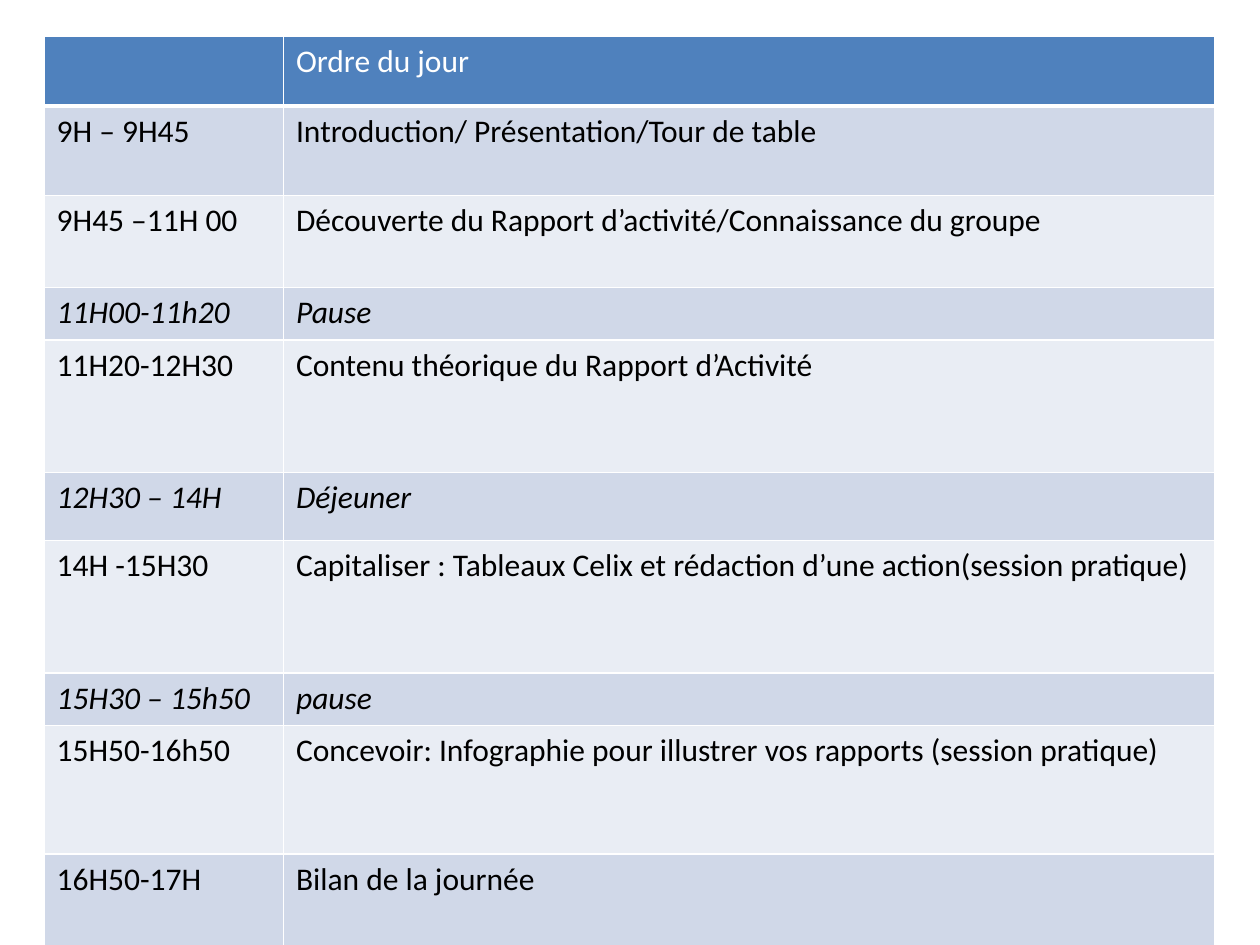
from dataclasses import dataclass

from lxml import etree
from pptx import Presentation
from pptx import util as u
from pptx.dml.color import RGBColor
from pptx.oxml import ns


@dataclass(frozen=True)
class Theme:
    font: str = "Calibri"
    size: int = 18
    head: str = "4F81BD"
    bands: tuple = ("E9EDF4", "D0D8E8")
    light: str = "FFFFFF"
    dark: str = "000000"
    line: int = 1
    thick: int = 3


THEME = Theme()
COLS = (1.9, 7.39)
ROWS = (
    (0.55, "", "Ordre du jour", False),
    (0.71, "9H – 9H45", "Introduction/ Présentation/Tour de table", False),
    (0.73, "9H45 –11H 00", "Découverte du Rapport d’activité/Connaissance du groupe", False),
    (0.42, "11H00-11h20", "Pause", True),
    (1.05, "11H20-12H30", "Contenu théorique du Rapport d’Activité", False),
    (0.54, "12H30 – 14H", "Déjeuner", True),
    (1.05, "14H -15H30", "Capitaliser : Tableaux Celix et rédaction d’une action(session pratique)", False),
    (0.42, "15H30 – 15h50", "pause", True),
    (1.02, "15H50-16h50", "Concevoir: Infographie pour illustrer vos rapports (session pratique)", False),
    (0.77, "16H50-17H", "Bilan de la journée", False),
)


def add_edges(cell, base):
    props = cell._tc.get_or_add_tcPr()
    for side in "LRTB":
        width = base if side == "B" else THEME.line
        edge = etree.SubElement(props, ns.qn(f"a:ln{side}"), w=str(u.Pt(width)))
        fill = etree.SubElement(edge, ns.qn("a:solidFill"))
        etree.SubElement(fill, ns.qn("a:srgbClr"), val=THEME.light)


def add_text(cell, words, color, slant):
    para = cell.text_frame.paragraphs[0]
    para.font.size = u.Pt(THEME.size)
    if not words:
        return
    run = para.add_run()
    run.text = words
    font = run.font
    font.name = THEME.font
    font.size = u.Pt(THEME.size)
    font.bold = False
    font.italic = slant
    font.color.rgb = RGBColor.from_string(color)


def add_agenda(slide):
    high = sum(row[0] for row in ROWS)
    frame = slide.shapes.add_table(
        len(ROWS), len(COLS), u.Inches(0.35), u.Inches(0.29),
        u.Inches(sum(COLS)), u.Inches(high))
    table = frame.table
    for col, width in zip(table.columns, COLS):
        col.width = u.Inches(width)
    for i, (height, time, topic, slant) in enumerate(ROWS):
        table.rows[i].height = u.Inches(height)
        back = THEME.bands[i % 2] if i else THEME.head
        color = THEME.dark if i else THEME.light
        base = THEME.line if i else THEME.thick
        for j, words in enumerate((time, topic)):
            cell = table.cell(i, j)
            add_edges(cell, base)
            cell.fill.solid()
            cell.fill.fore_color.rgb = RGBColor.from_string(back)
            add_text(cell, words, color, slant)


def main():
    deck = Presentation()
    deck.slide_width = u.Inches(10)
    deck.slide_height = u.Inches(7.5)
    slide = deck.slides.add_slide(deck.slide_layouts[6])
    add_agenda(slide)
    deck.save("out.pptx")


if __name__ == "__main__":
    main()
